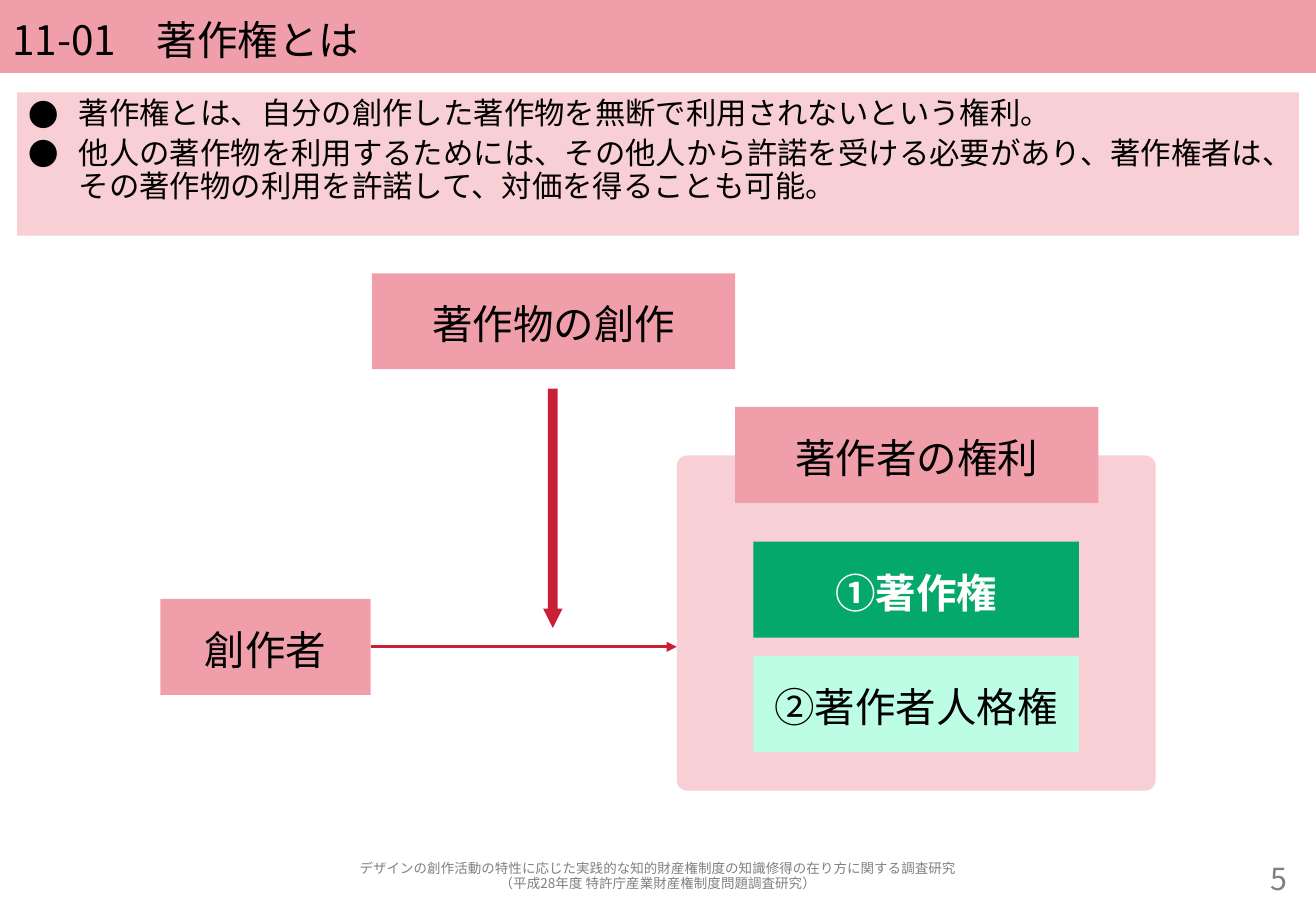
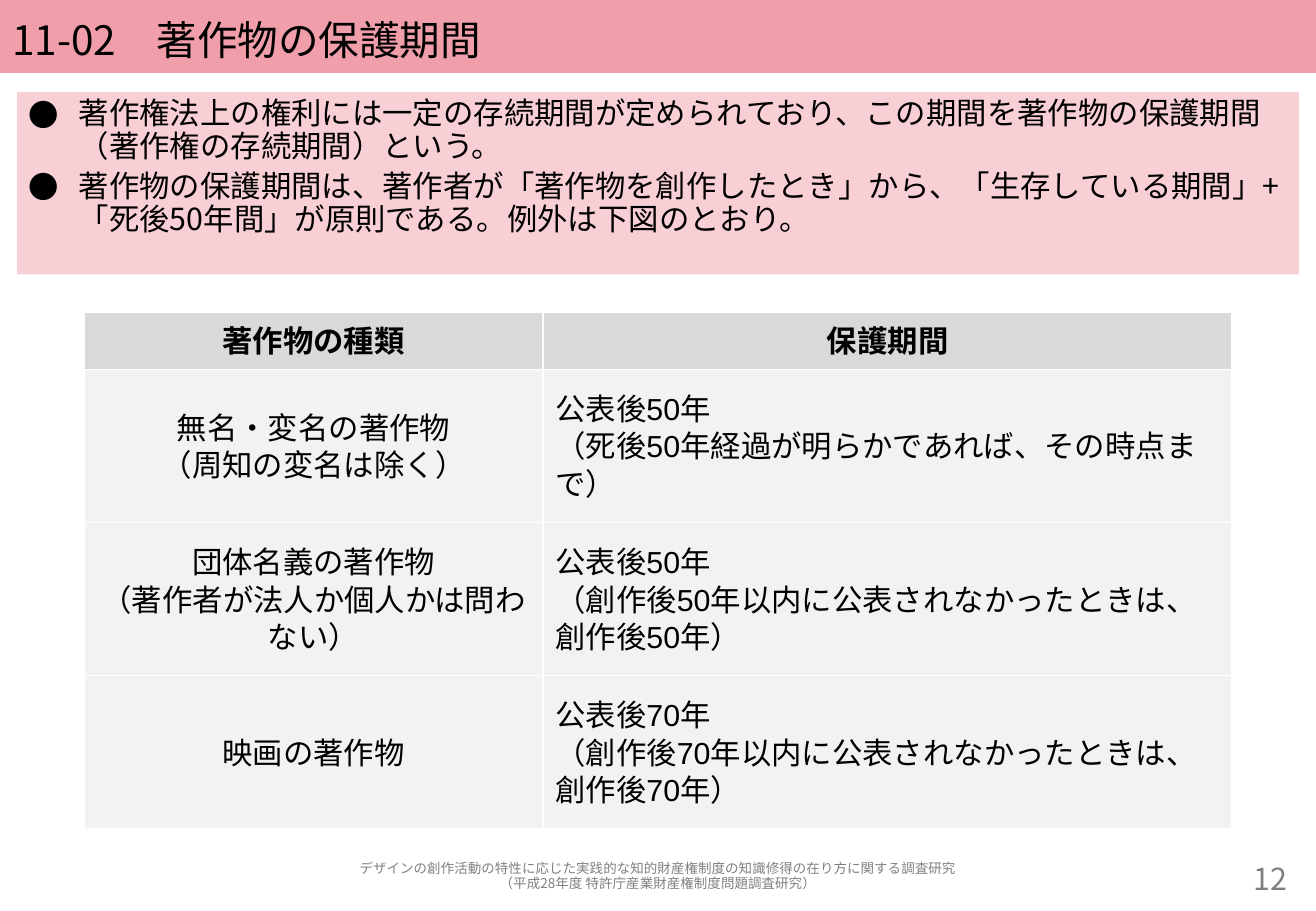
import pptx
import pptx.util
import pptx.dml.color
import pptx.enum.shapes
import pptx.enum.text
import pptx.oxml.ns
from lxml import etree

Inches, Pt = pptx.util.Inches, pptx.util.Pt
Shape = pptx.enum.shapes.MSO_SHAPE
Align = pptx.enum.text.PP_ALIGN
Anchor = pptx.enum.text.MSO_ANCHOR
qn = pptx.oxml.ns.qn

# Shared style
COLORS = {
    "rose": "F09FAA", "pale_rose": "F8CFD5", "red": "C91F37",
    "green": "04A86A", "mint": "BDFDE5", "header": "D9D9D9",
    "cell": "F2F2F2", "grey": "808080", "black": "000000", "white": "FFFFFF",
}
FONT, TABLE_FONT = "Noto Sans CJK JP", "Arial"
WIDTH, HEIGHT, MARGIN = 10.83, 7.5, 0.14
CONTENT_WIDTH = WIDTH - 2 * MARGIN
FOOTER_TOP, FOOTER_HEIGHT = 7.06, 0.31
LINE_SPACING, TIGHT_SPACING = 1.1, 0.91
FOOTER = [
    "デザインの創作活動の特性に応じた実践的な知的財産権制度の知識修得の在り方に関する調査研究",
    "（平成28年度 特許庁産業財産権制度問題調査研究）",
]

# Slide content
RIGHTS = {
    "title": "11-01　著作権とは", "number": "5", "summary_height": 1.18,
    "summary": [
        "著作権とは、自分の創作した著作物を無断で利用されないという権利。",
        "他人の著作物を利用するためには、その他人から許諾を受ける必要があり、著作権者は、その著作物の利用を許諾して、対価を得ることも可能。",
    ],
}
TERM = {
    "title": "11-02　著作物の保護期間", "number": "12", "summary_height": 1.5,
    "summary": [
        "著作権法上の権利には一定の存続期間が定められており、この期間を著作物の保護期間（著作権の存続期間）という。",
        "著作物の保護期間は、著作者が「著作物を創作したとき」から、「生存している期間」+「死後50年間」が原則である。例外は下図のとおり。",
    ],
}
BOX_HEIGHT = 0.79
CREATOR = (1.32, 4.93, 1.73)
RIGHTS_PANEL = (5.57, 3.75, 3.94, 2.76)
# text, (left, top, width), fill, font colour, bold
RIGHTS_BOXES = [
    ("①著作権", (6.2, 4.46, 2.68), "green", "white", True),
    ("②著作者人格権", (6.2, 5.4, 2.68), "mint", "black", False),
    ("著作者の権利", (6.05, 3.35, 2.99), "rose", "black", False),
    ("著作物の創作", (3.06, 2.25, 2.99), "rose", "black", False),
]
TERM_COLUMNS, TERM_ROWS = (3.78, 5.67), (0.47, 1.26, 1.26, 1.26)
TERM_TABLE = [
    (["著作物の種類"], ["保護期間"]),
    (["無名・変名の著作物", "（周知の変名は除く）"],
     ["公表後50年", "（死後50年経過が明らかであれば、その時点まで）"]),
    (["団体名義の著作物", "（著作者が法人か個人かは問わない）"],
     ["公表後50年", "（創作後50年以内に公表されなかったときは、創作後50年）"]),
    (["映画の著作物"],
     ["公表後70年", "（創作後70年以内に公表されなかったときは、創作後70年）"]),
]


def rgb(name):
    return pptx.dml.color.RGBColor.from_string(COLORS[name])


def paint(item, color):
    item.fill.solid()
    item.fill.fore_color.rgb = rgb(color)


def write(frame, lines, size, color="black", align=Align.LEFT, bold=False,
          font=FONT, spacing=LINE_SPACING, anchor=Anchor.MIDDLE):
    frame.word_wrap = True
    frame.vertical_anchor = anchor
    for index, line in enumerate(lines):
        paragraph = frame.paragraphs[0] if index == 0 else frame.add_paragraph()
        paragraph.alignment = align
        paragraph.line_spacing = spacing
        paragraph.space_before = Pt(0)
        run = paragraph.add_run()
        run.text = line
        run.font.name = font
        run.font.size = Pt(size)
        run.font.bold = bold
        run.font.color.rgb = rgb(color)
        east_asian = etree.SubElement(run.font._element, qn("a:ea"))
        east_asian.set("typeface", font)


def add_block(slide, kind, box, color):
    shape = slide.shapes.add_shape(kind, *map(Inches, box))
    shape.shadow.inherit = False
    shape.line.fill.background()
    paint(shape, color)
    return shape


def add_label(slide, text, place, fill, color="black", bold=False):
    shape = add_block(slide, Shape.RECTANGLE, (*place, BOX_HEIGHT), fill)
    write(shape.text_frame, [text], 24, color, Align.CENTER, bold)
    return shape


def add_text(slide, box, lines, size, align, spacing=LINE_SPACING):
    frame = slide.shapes.add_textbox(*map(Inches, box)).text_frame
    write(frame, lines, size, "grey", align, spacing=spacing)
    frame.margin_top = frame.margin_bottom = 0


def add_bullets(frame):
    for paragraph in frame.paragraphs:
        paragraph.space_before = Pt(3.6)
        properties = paragraph._p.get_or_add_pPr()
        properties.set("marL", str(Inches(0.41)))
        properties.set("indent", str(-Inches(0.41)))
        etree.SubElement(properties, qn("a:buFont")).set("typeface", FONT)
        etree.SubElement(properties, qn("a:buChar")).set("char", "●")


def add_base_slide(presentation, content):
    slide = presentation.slides.add_slide(presentation.slide_layouts[5])
    # Title band
    title = slide.shapes.title
    title.left, title.top = Inches(0), Inches(0)
    title.width, title.height = Inches(WIDTH), Inches(0.6)
    paint(title, "rose")
    write(title.text_frame, [content["title"]], 24)
    # Summary panel
    box = (MARGIN, 0.76, CONTENT_WIDTH, content["summary_height"])
    summary = add_block(slide, Shape.RECTANGLE, box, "pale_rose")
    write(summary.text_frame, content["summary"], 18,
          spacing=TIGHT_SPACING, anchor=Anchor.TOP)
    add_bullets(summary.text_frame)
    # Footer and page number
    add_text(slide, (MARGIN, FOOTER_TOP, CONTENT_WIDTH, FOOTER_HEIGHT),
             FOOTER, 8, Align.CENTER, TIGHT_SPACING)
    add_text(slide, (9.35, FOOTER_TOP, 1.34, FOOTER_HEIGHT),
             [content["number"]], 18, Align.RIGHT)
    return slide


def build_rights(presentation):
    slide = add_base_slide(presentation, RIGHTS)
    # Boxes
    creator = add_label(slide, "創作者", CREATOR, "rose")
    panel = add_block(slide, Shape.ROUNDED_RECTANGLE, RIGHTS_PANEL, "pale_rose")
    panel.adjustments[0] = 0.031
    for label in RIGHTS_BOXES:
        add_label(slide, *label)
    # Arrows
    creation_arrow = add_block(slide, Shape.DOWN_ARROW, (4.47, 3.2, 0.16, 1.97), "red")
    creation_arrow.adjustments[0] = 0.5
    creation_arrow.adjustments[1] = 0.996
    middle = Inches(CREATOR[1] + BOX_HEIGHT / 2)
    connector = slide.shapes.add_connector(
        pptx.enum.shapes.MSO_CONNECTOR.STRAIGHT,
        Inches(CREATOR[0] + CREATOR[2]), middle, Inches(RIGHTS_PANEL[0]), middle)
    connector.begin_connect(creator, 3)
    connector.line.color.rgb = rgb("red")
    connector.line.width = Pt(2)
    etree.SubElement(connector.line._get_or_add_ln(), qn("a:tailEnd")).set("type", "triangle")
    etree.SubElement(connector._element.spPr, qn("a:effectLst"))


def add_borders(cell):
    properties = cell._tc.get_or_add_tcPr()
    for side in ("a:lnL", "a:lnR", "a:lnT", "a:lnB"):
        line = etree.SubElement(properties, qn(side), w=str(Pt(1)))
        fill = etree.SubElement(line, qn("a:solidFill"))
        etree.SubElement(fill, qn("a:srgbClr")).set("val", COLORS["white"])


def build_term(presentation):
    slide = add_base_slide(presentation, TERM)
    table = slide.shapes.add_table(
        len(TERM_ROWS), len(TERM_COLUMNS), Inches(0.69), Inches(2.57),
        Inches(sum(TERM_COLUMNS)), Inches(sum(TERM_ROWS))).table
    table.first_row = table.horz_banding = False
    for column, width in zip(table.columns, TERM_COLUMNS):
        column.width = Inches(width)
    for row_index, (row, height) in enumerate(zip(table.rows, TERM_ROWS)):
        row.height = Inches(height)
        is_header = row_index == 0
        for column_index, lines in enumerate(TERM_TABLE[row_index]):
            cell = row.cells[column_index]
            centred = is_header or column_index == 0
            write(cell.text_frame, lines, 18, bold=is_header, font=TABLE_FONT,
                  align=Align.CENTER if centred else Align.LEFT)
            cell.vertical_anchor = Anchor.MIDDLE
            add_borders(cell)
            paint(cell, "header" if is_header else "cell")


def main():
    presentation = pptx.Presentation()
    presentation.slide_width = Inches(WIDTH)
    presentation.slide_height = Inches(HEIGHT)
    build_rights(presentation)
    build_term(presentation)
    presentation.save("out.pptx")


if __name__ == "__main__":
    main()
